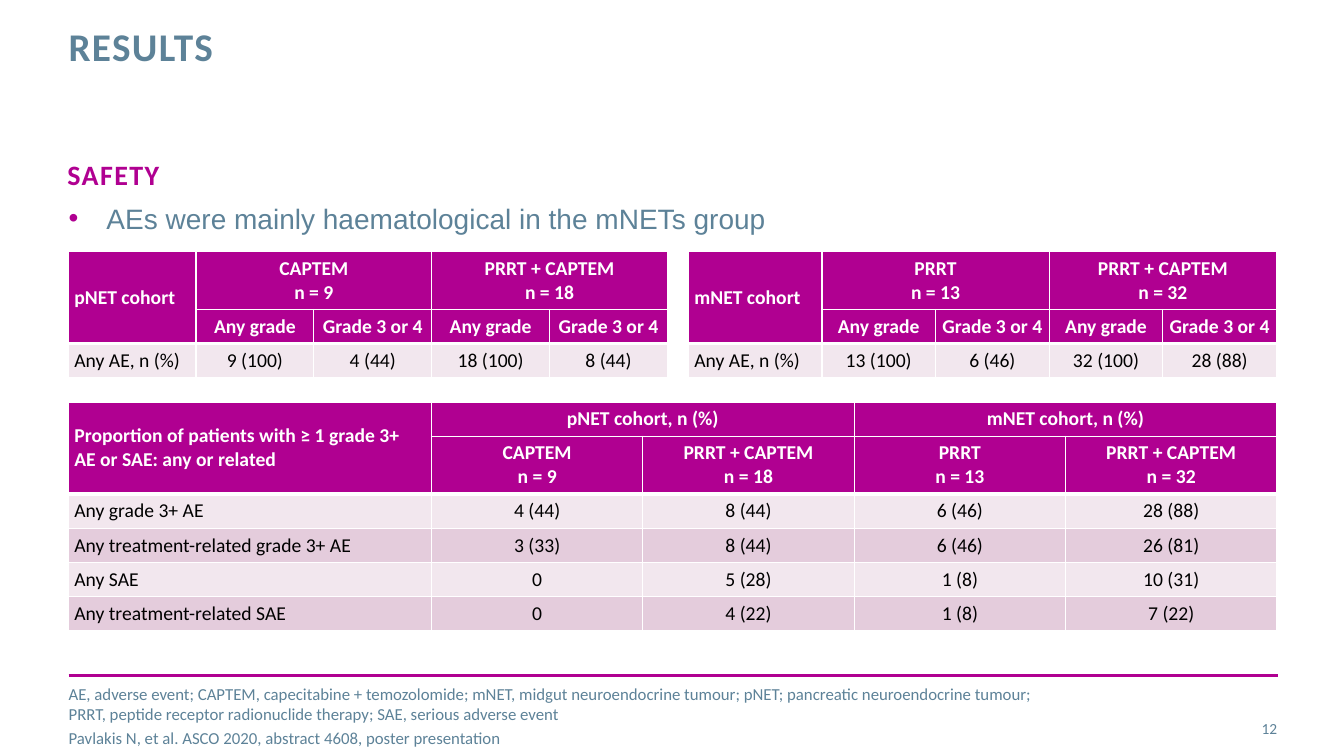
from lxml.etree import SubElement
from pptx import Presentation
from pptx.dml.color import RGBColor
from pptx.enum.shapes import MSO_CONNECTOR
from pptx.enum.text import MSO_ANCHOR, PP_ALIGN
from pptx.oxml.ns import qn
from pptx.util import Pt

COLORS = {
    "magenta": "B00091",
    "slate": "5D8298",
    "white": "FFFFFF",
    "black": "000000",
    "light": "F2E7EE",
    "mid": "E4CCDC",
}
LEFT = 49
HEADER_ROWS = 2
ONE_LINE, TWO_LINES = 24.4, 41.4


def color(name):
    return RGBColor.from_string(COLORS[name])


class SlideBuilder:
    def __init__(self, page, font="Calibri"):
        self.page = page
        self.font = font

    def add_spans(self, para, text, size, ink, bold=False, spacing=0, font=None):
        """Add the text run by run; a vertical tab marks a line break."""
        for index, line in enumerate(text.split("\v")):
            if index:
                para.add_line_break()
            span = para.add_run()
            span.text = line
            span.font.name = font or self.font
            span.font.size = Pt(size)
            span.font.bold = bold
            span.font.color.rgb = color(ink)
            if spacing:
                span.font._element.set("spc", str(spacing * 100))

    def text(self, left, top, width, height, lines, size, ink="slate",
             anchor=MSO_ANCHOR.TOP, align=PP_ALIGN.LEFT, gap=0,
             leading=None, bullet=None, **style):
        box = self.page.shapes.add_textbox(Pt(left), Pt(top), Pt(width), Pt(height))
        frame = box.text_frame
        frame.word_wrap = True
        frame.vertical_anchor = anchor
        frame.margin_left = frame.margin_right = Pt(0)
        frame.margin_top = frame.margin_bottom = Pt(0)
        for index, line in enumerate(lines):
            para = frame.add_paragraph() if index else frame.paragraphs[0]
            para.alignment = align
            if index:
                para.space_before = Pt(gap)
            if leading:
                para.line_spacing = Pt(leading)
            if bullet:
                self.bullet(para, bullet)
            self.add_spans(para, line, size, ink, **style)

    def bullet(self, para, ink, indent=27):
        props = para._p.get_or_add_pPr()
        props.set("marL", str(Pt(indent)))
        props.set("indent", str(-Pt(indent)))
        SubElement(SubElement(props, qn("a:buClr")), qn("a:srgbClr"), val=COLORS[ink])
        SubElement(props, qn("a:buFont"), typeface="Arial")
        SubElement(props, qn("a:buChar"), char="•")

    def rule(self, left, right, top, width, ink):
        line = self.page.shapes.add_connector(
            MSO_CONNECTOR.STRAIGHT, Pt(left), Pt(top), Pt(right), Pt(top))
        line.line.color.rgb = color(ink)
        line.line.width = Pt(width)
        SubElement(line._element.spPr, qn("a:effectLst"))

    def borders(self, cell, **widths):
        props = cell._tc.get_or_add_tcPr()
        for side, width in widths.items():
            line = SubElement(props, qn(f"a:ln{side}"), w=str(Pt(width)))
            fill = SubElement(line, qn("a:solidFill"))
            SubElement(fill, qn("a:srgbClr"), val=COLORS["white"])

    def table(self, left, top, first_width, other_width, heights, rows):
        """Draw five columns under a two-row header with a merged corner."""
        widths = [first_width] + [other_width] * 4
        table = self.page.shapes.add_table(
            len(rows), len(widths), Pt(left), Pt(top),
            Pt(sum(widths)), Pt(sum(heights))).table
        for column, width in zip(table.columns, widths):
            column.width = Pt(width)
        for row, height in zip(table.rows, heights):
            row.height = Pt(height)
        for start, end in (((0, 0), (1, 0)), ((0, 1), (0, 2)), ((0, 3), (0, 4))):
            table.cell(*start).merge(table.cell(*end))
        for r, row in enumerate(rows):
            for c, text in enumerate(row):
                self.cell(table.cell(r, c), r, c, text)

    def cell(self, cell, r, c, text):
        header = r < HEADER_ROWS
        self.borders(cell, L=1, R=1,
                     T=3 if r == HEADER_ROWS else 1,
                     B=3 if r + cell.span_height == HEADER_ROWS else 1)
        cell.fill.solid()
        cell.fill.fore_color.rgb = color(
            "magenta" if header else ("light", "mid")[(r - HEADER_ROWS) % 2])
        cell.vertical_anchor = MSO_ANCHOR.MIDDLE
        cell.margin_left = cell.margin_right = Pt(4.1)
        cell.margin_top = cell.margin_bottom = Pt(3.6)
        if not text:
            return
        for index, line in enumerate(text.split("\n")):
            frame = cell.text_frame
            para = frame.add_paragraph() if index else frame.paragraphs[0]
            para.alignment = PP_ALIGN.CENTER if c else PP_ALIGN.LEFT
            self.add_spans(para, line, 14, "white" if header else "black", bold=header)


def main():
    deck = Presentation()
    deck.slide_width, deck.slide_height = Pt(960), Pt(540)
    slide = SlideBuilder(deck.slides.add_slide(deck.slide_layouts[6]))

    # Headings
    slide.rule(LEFT, 913, 482.4, 2, "magenta")
    slide.text(LEFT, 19.5, 688, 63, ["RESULTS"], 28, leading=30, bold=True, spacing=1)
    slide.text(48.2, 112.5, 864, 55, ["SAFETY"], 20, "magenta", bold=True, spacing=1)
    slide.text(LEFT, 144, 863, 81, ["AEs were mainly haematological in the mNETs group"],
               20, bullet="magenta", font="Arial")

    # Adverse events in each cohort
    grades = ["", "Any grade", "Grade 3 or 4", "Any grade", "Grade 3 or 4"]
    cohort_heights = [TWO_LINES, ONE_LINE, ONE_LINE]
    slide.table(LEFT, 179.6, 91, 84.2, cohort_heights, [
        ["pNET cohort", "CAPTEM\nn = 9", "", "PRRT + CAPTEM\nn = 18", ""],
        grades,
        ["Any AE, n (%)", "9 (100)", "4 (44)", "18 (100)", "8 (44)"],
    ])
    slide.table(491.9, 179.6, 95.2, 81.2, cohort_heights, [
        ["mNET cohort", "PRRT\nn = 13", "", "PRRT + CAPTEM\nn = 32", ""],
        grades,
        ["Any AE, n (%)", "13 (100)", "6 (46)", "32 (100)", "28 (88)"],
    ])

    # Severe and serious events in both cohorts
    slide.table(LEFT, 287.2, 259.2, 151, [ONE_LINE, TWO_LINES] + [ONE_LINE] * 4, [
        ["Proportion of patients with ≥ 1 grade 3+ \vAE or SAE: any or related",
         "pNET cohort, n (%)", "", "mNET cohort, n (%)", ""],
        ["", "CAPTEM\nn = 9", "PRRT + CAPTEM\nn = 18",
         "PRRT\nn = 13", "PRRT + CAPTEM\nn = 32"],
        ["Any grade 3+ AE", "4 (44)", "8 (44)", "6 (46)", "28 (88)"],
        ["Any treatment-related grade 3+ AE", "3 (33)", "8 (44)", "6 (46)", "26 (81)"],
        ["Any SAE", "0", "5 (28)", "1 (8)", "10 (31)"],
        ["Any treatment-related SAE", "0", "4 (22)", "1 (8)", "7 (22)"],
    ])

    # Footer
    slide.text(850.3, 506.2, 62, 28.8, ["12"], 11,
               anchor=MSO_ANCHOR.MIDDLE, align=PP_ALIGN.RIGHT)
    slide.text(LEFT, 482.4, 851, 57.6, [
        "AE, adverse event; CAPTEM, capecitabine + temozolomide; mNET, midgut "
        "neuroendocrine tumour; pNET; pancreatic neuroendocrine tumour; \v"
        "PRRT, peptide receptor radionuclide therapy; SAE, serious adverse event",
        "Pavlakis N, et al. ASCO 2020, abstract 4608, poster presentation",
    ], 12, anchor=MSO_ANCHOR.MIDDLE, gap=3)

    deck.save("out.pptx")


if __name__ == "__main__":
    main()
